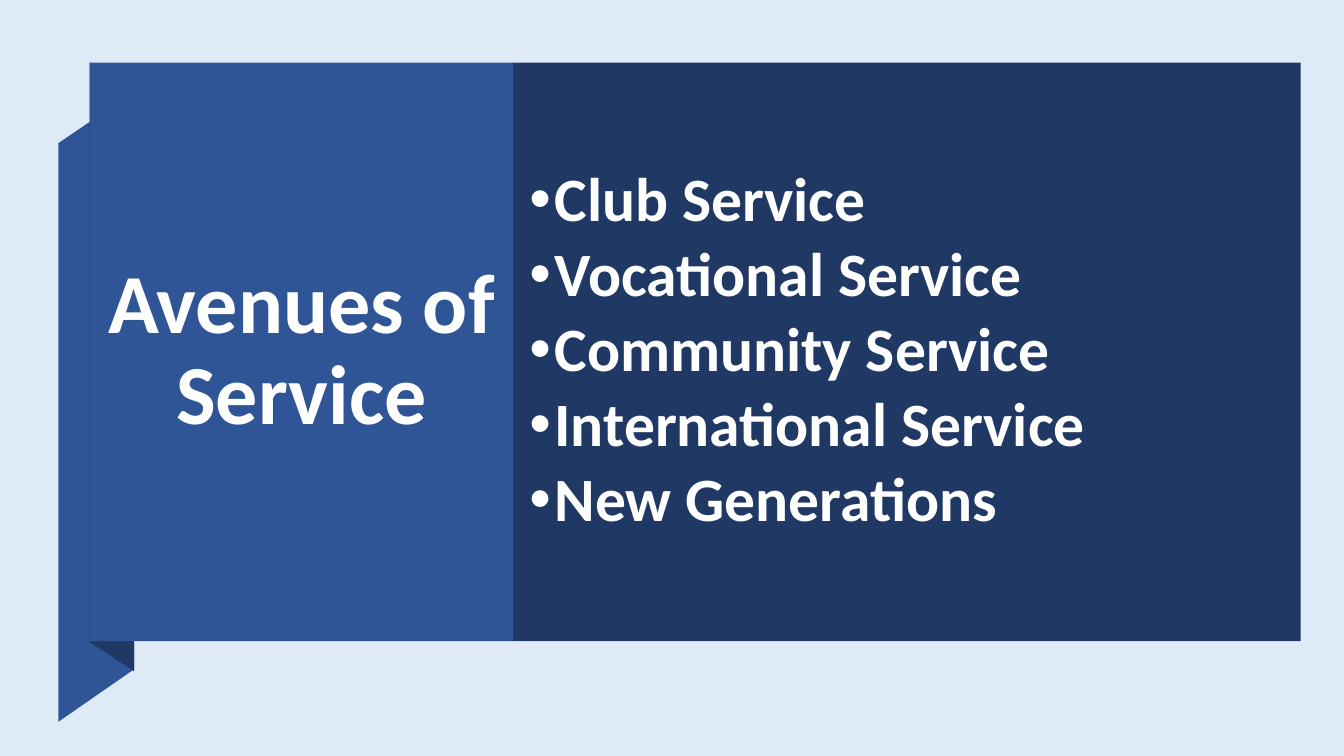
from dataclasses import dataclass

from lxml.etree import SubElement
from pptx import Presentation
from pptx.dml.color import RGBColor
from pptx.enum.text import MSO_ANCHOR, MSO_AUTO_SIZE, PP_ALIGN
from pptx.oxml.ns import qn
from pptx.util import Inches, Pt


@dataclass(frozen=True)
class Theme:
    background: RGBColor = RGBColor(0xDE, 0xEB, 0xF7)
    ribbon: RGBColor = RGBColor(0x2F, 0x55, 0x97)
    panel: RGBColor = RGBColor(0x20, 0x38, 0x64)
    text: RGBColor = RGBColor(0xFF, 0xFF, 0xFF)
    font: str = "Calibri"
    title_size: Pt = Pt(60)
    list_size: Pt = Pt(44)


THEME = Theme()
TITLE_BOX = (0.89, 0.62, 4.2, 5.74)
LIST_BOX = (5.09, 0.62, 7.81, 5.74)
RIBBON_TAIL = [(0.58, 7.16), (1.33, 6.64), (1.33, 0.91), (0.58, 1.42)]
RIBBON_FOLD = [(0.89, 6.37), (1.33, 6.66), (1.33, 0.9), (0.89, 0.62)]
AVENUES = [
    "Club Service",
    "Vocational Service",
    "Community Service",
    "International Service",
    "New Generations",
]


def set_attributes(target, values):
    for name, value in values.items():
        setattr(target, name, value)


def paint(shape, color):
    shape.fill.solid()
    shape.fill.fore_color.rgb = color


def add_outline(slide, points, color):
    corners = [(Inches(x), Inches(y)) for x, y in points]
    builder = slide.shapes.build_freeform(*corners[0], scale=1.0)
    builder.add_line_segments(corners[1:], close=True)
    shape = builder.convert_to_shape()
    shape.shadow.inherit = False
    paint(shape, color)
    shape.line.fill.background()


def add_bullet(para):
    properties = para._p.get_or_add_pPr()
    properties.set("marL", str(Inches(0.31)))
    properties.set("indent", str(Inches(-0.25)))
    SubElement(properties, qn("a:buFont")).set("typeface", "Arial")
    SubElement(properties, qn("a:buChar")).set("char", "•")


def fill_placeholder(box, bounds, color, lines, size, paragraph_format):
    places = map(Inches, bounds)
    set_attributes(box, dict(zip(("left", "top", "width", "height"), places)))
    paint(box, color)
    frame = box.text_frame
    frame.text = "\n".join(lines)
    set_attributes(frame, {
        "word_wrap": True,
        "auto_size": MSO_AUTO_SIZE.NONE,
        "vertical_anchor": MSO_ANCHOR.MIDDLE,
    })
    for para in frame.paragraphs:
        set_attributes(para, {"line_spacing": 0.9, "space_before": Pt(0), **paragraph_format})
        for span in para.runs:
            set_attributes(span.font, {"name": THEME.font, "size": size, "bold": True})
            span.font.color.rgb = THEME.text


def bring_to_front(slide, box):
    slide.shapes.element.append(box.element)


def main():
    deck = Presentation()
    set_attributes(deck, {"slide_width": Inches(13.33), "slide_height": Inches(7.5)})
    page = deck.slides.add_slide(deck.slide_layouts.get_by_name("Title and Content"))
    paint(page.background, THEME.background)

    add_outline(page, RIBBON_TAIL, THEME.ribbon)
    add_outline(page, RIBBON_FOLD, THEME.panel)

    title, body = page.shapes.title, page.placeholders[1]
    fill_placeholder(title, TITLE_BOX, THEME.ribbon, ["Avenues of Service"],
                     THEME.title_size, {"alignment": PP_ALIGN.CENTER})
    fill_placeholder(body, LIST_BOX, THEME.panel, AVENUES,
                     THEME.list_size, {"alignment": PP_ALIGN.LEFT, "space_after": Pt(6)})
    for para in body.text_frame.paragraphs:
        add_bullet(para)
    for box in (title, body):
        bring_to_front(page, box)

    deck.save("out.pptx")


if __name__ == "__main__":
    main()
